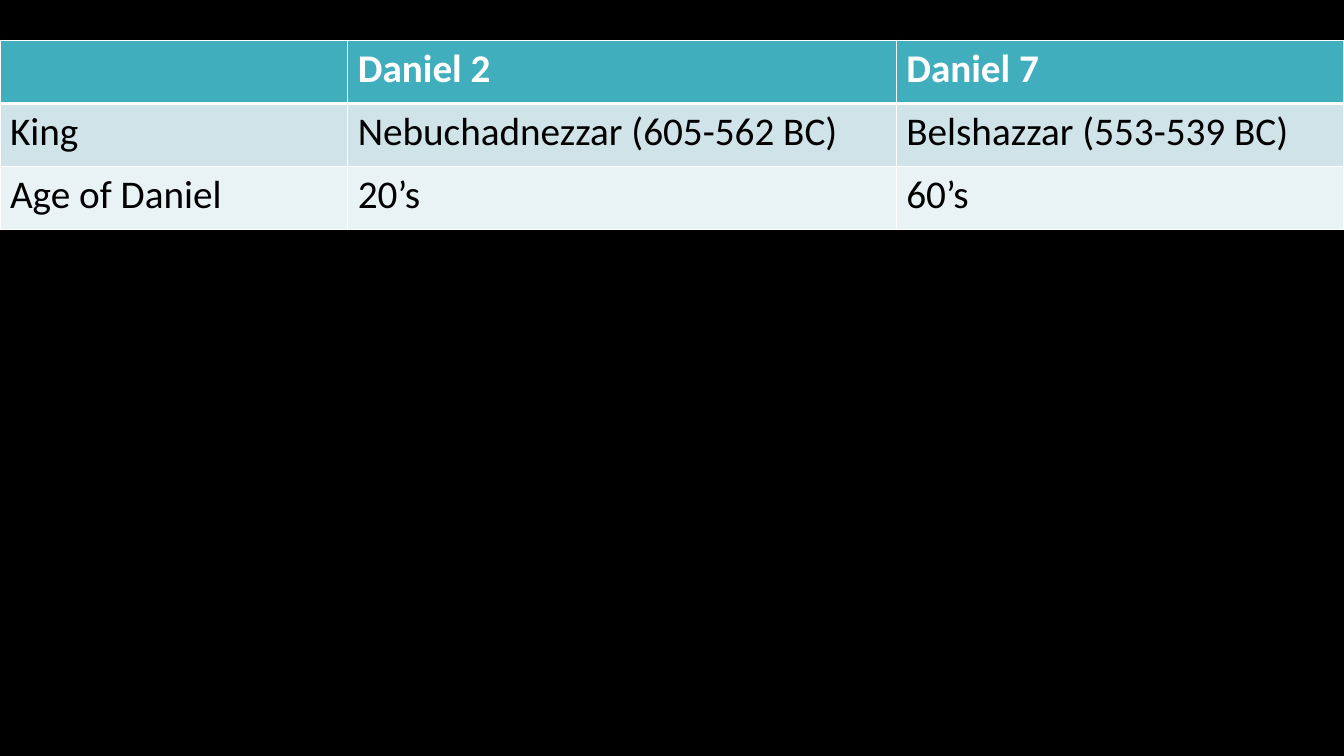
from lxml.etree import SubElement as Sub
from pptx import Presentation
from pptx.dml.color import RGBColor as RGB
from pptx.oxml.ns import qn
from pptx.util import Inches, Pt

COLORS = {
    "background": "000000",
    "header": "41AEBD",
    "band_dark": "CFE3E8",
    "band_light": "E9F2F4",
    "white": "FFFFFF",
    "black": "000000",
}
ROWS = [
    ["", "Daniel 2", "Daniel 7"],
    ["King", "Nebuchadnezzar (605-562 BC)", "Belshazzar (553-539 BC)"],
    ["Age of Daniel", "20’s", "60’s"],
]


def write(tf, text, *, font="Calibri", size=28, color="black", bold=False):
    p = tf.paragraphs[0]
    p.font.size = Pt(size)
    if text:
        r = p.add_run()
        r.text = text
        r.font.name, r.font.size, r.font.bold = font, Pt(size), bold
        r.font.color.rgb = RGB.from_string(COLORS[color])


class Deck:
    """Style and current slide, with lengths in percent of the slide size."""

    def __init__(self, width, height):
        self.prs = Presentation()
        self.prs.slide_width, self.prs.slide_height = Inches(width), Inches(height)
        self.s = self.prs.slides.add_slide(self.prs.slide_layouts[6])
        fill = self.s.background.fill
        fill.solid()
        fill.fore_color.rgb = RGB.from_string(COLORS["background"])

    def x(self, share):
        return round(self.prs.slide_width * share / 100)

    def y(self, share):
        return round(self.prs.slide_height * share / 100)

    def border(self, cell, top, bottom):
        tcPr = cell._tc.get_or_add_tcPr()
        for side, width in (("L", 1), ("R", 1), ("T", top), ("B", bottom)):
            ln = Sub(tcPr, qn(f"a:ln{side}"), w=str(Pt(width)))
            Sub(Sub(ln, qn("a:solidFill")), qn("a:srgbClr"), val=COLORS["white"])

    def table(self, rows, top, widths, row_height):
        sp = self.s.shapes.add_table(
            len(rows), len(widths), 0, self.y(top),
            self.x(sum(widths)), self.y(row_height * len(rows)))
        for column, width in zip(sp.table.columns, widths):
            column.width = self.x(width)
        for i, texts in enumerate(rows):
            header = i == 0
            band = "header" if header else ("band_light", "band_dark")[i % 2]
            for j, text in enumerate(texts):
                cell = sp.table.cell(i, j)
                self.border(cell, 3 if i == 1 else 1, 3 if header else 1)
                cell.fill.solid()
                cell.fill.fore_color.rgb = RGB.from_string(COLORS[band])
                write(cell.text_frame, text, bold=header,
                      color="white" if header else "black")


def main():
    deck = Deck(13.33, 7.5)
    deck.table(ROWS, top=5.33, widths=[25.88, 40.81, 33.31], row_height=8.36)
    deck.prs.save("out.pptx")


if __name__ == "__main__":
    main()
